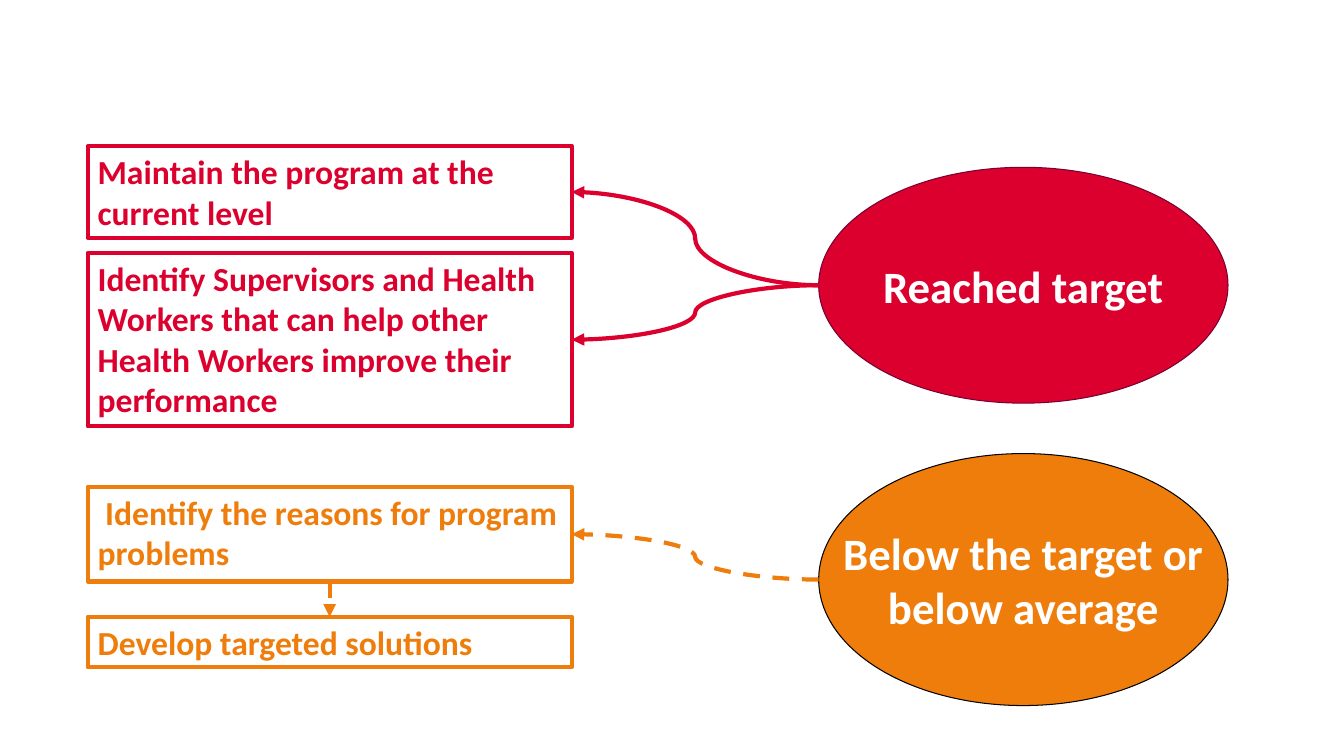
import dataclasses

import lxml.etree
import pptx
import pptx.dml.color
import pptx.enum.dml
import pptx.enum.shapes
import pptx.enum.text
import pptx.oxml.ns
import pptx.util

Inches = pptx.util.Inches
Pt = pptx.util.Pt
RGB = pptx.dml.color.RGBColor
SHAPE = pptx.enum.shapes.MSO_SHAPE
CONNECTOR = pptx.enum.shapes.MSO_CONNECTOR
ALIGN = pptx.enum.text.PP_ALIGN
ANCHOR = pptx.enum.text.MSO_ANCHOR
FIT = pptx.enum.text.MSO_AUTO_SIZE
DASH = pptx.enum.dml.MSO_LINE.DASH
TOP, BOTTOM, RIGHT = 0, 2, 3


@dataclasses.dataclass(frozen=True)
class Theme:
    font: str = "Calibri"
    reached: RGB = RGB(0xDC, 0x00, 0x2E)
    reached_edge: RGB = RGB(0x79, 0x00, 0x33)
    below: RGB = RGB(0xEE, 0x7D, 0x0C)
    below_edge: RGB = RGB(0, 0, 0)
    outcome_text: RGB = RGB(0xFF, 0xFF, 0xFF)
    action_size: Pt = Pt(24)
    outcome_size: Pt = Pt(32)
    heavy: Pt = Pt(3)
    thin: Pt = Pt(0.75)


THEME = Theme()
ACTION_LEFT, ACTION_WIDTH = 0.87, 4.8
OUTCOME_LEFT, OUTCOME_WIDTH = 8.12, 4.06


def apply(target, values):
    for name, value in values.items():
        setattr(target, name, value)


def set_line(line, color, width):
    line.color.rgb = color
    line.width = width


def write_text(shape, lines, size, color, align, frame_format):
    apply(shape.text_frame, frame_format)
    shape.text_frame.text = "\n".join(lines)
    for paragraph in shape.text_frame.paragraphs:
        paragraph.alignment = align
        apply(paragraph.font, {"name": THEME.font, "size": size, "bold": True})
        paragraph.font.color.rgb = color


def add_action(slide, top, height, color, lines):
    action = slide.shapes.add_shape(
        SHAPE.RECTANGLE, Inches(ACTION_LEFT), Inches(top),
        Inches(ACTION_WIDTH), Inches(height))
    action.shadow.inherit = False
    action.fill.background()
    set_line(action.line, color, THEME.heavy)
    write_text(action, lines, THEME.action_size, color, ALIGN.LEFT, {
        "word_wrap": True, "vertical_anchor": ANCHOR.TOP,
        "auto_size": FIT.SHAPE_TO_FIT_TEXT})
    return action


def add_outcome(slide, top, height, color, edge, lines):
    outcome = slide.shapes.add_shape(
        SHAPE.OVAL, Inches(OUTCOME_LEFT), Inches(top),
        Inches(OUTCOME_WIDTH), Inches(height))
    outcome.shadow.inherit = False
    outcome.fill.solid()
    outcome.fill.fore_color.rgb = color
    set_line(outcome.line, edge, THEME.thin)
    write_text(outcome, lines, THEME.outcome_size, THEME.outcome_text, ALIGN.CENTER, {
        "word_wrap": False, "vertical_anchor": ANCHOR.MIDDLE})
    return outcome


def add_arrow(slide, kind, start, action, side, color, dash=None):
    arrow = slide.shapes.add_connector(kind, *start, *start)
    arrow.end_connect(action, side)
    set_line(arrow.line, color, THEME.heavy)
    arrow.line.dash_style = dash
    qn = pptx.oxml.ns.qn
    lxml.etree.SubElement(arrow.line._get_or_add_ln(), qn("a:tailEnd"), type="triangle")
    lxml.etree.SubElement(arrow._element.spPr, qn("a:effectLst"))
    return arrow


def add_outcome_arrow(slide, outcome, action, color, dash=None):
    start = outcome.left, outcome.top + outcome.height // 2
    add_arrow(slide, CONNECTOR.CURVE, start, action, RIGHT, color, dash)


def add_step_arrow(slide, action, following, color):
    start = action.left + action.width // 2, action.top + action.height
    arrow = add_arrow(slide, CONNECTOR.STRAIGHT, start, following, TOP, color, DASH.DASH)
    arrow.begin_connect(action, BOTTOM)


def main():
    presentation = pptx.Presentation()
    apply(presentation, {"slide_width": Inches(13.33), "slide_height": Inches(7.5)})
    slide = presentation.slides.add_slide(presentation.slide_layouts[6])

    reasons = add_action(slide, 4.83, 0.94, THEME.below, [
        " Identify the reasons for program problems"])
    solutions = add_action(slide, 6.12, 0.5, THEME.below, ["Develop targeted solutions"])
    maintain = add_action(slide, 1.45, 0.91, THEME.reached, [
        "Maintain the program at the", "current level"])
    helpers = add_action(slide, 2.51, 1.72, THEME.reached, [
        "Identify Supervisors and Health",
        "Workers that can help other Health Workers improve their performance"])

    reached = add_outcome(slide, 1.66, 2.34, THEME.reached, THEME.reached_edge, [
        "Reached target"])
    below = add_outcome(slide, 4.5, 2.5, THEME.below, THEME.below_edge, [
        "Below the target or", "below average"])

    for action in (maintain, helpers):
        add_outcome_arrow(slide, reached, action, THEME.reached)
    add_outcome_arrow(slide, below, reasons, THEME.below, DASH.DASH)
    add_step_arrow(slide, reasons, solutions, THEME.below)

    presentation.save("out.pptx")


if __name__ == "__main__":
    main()
